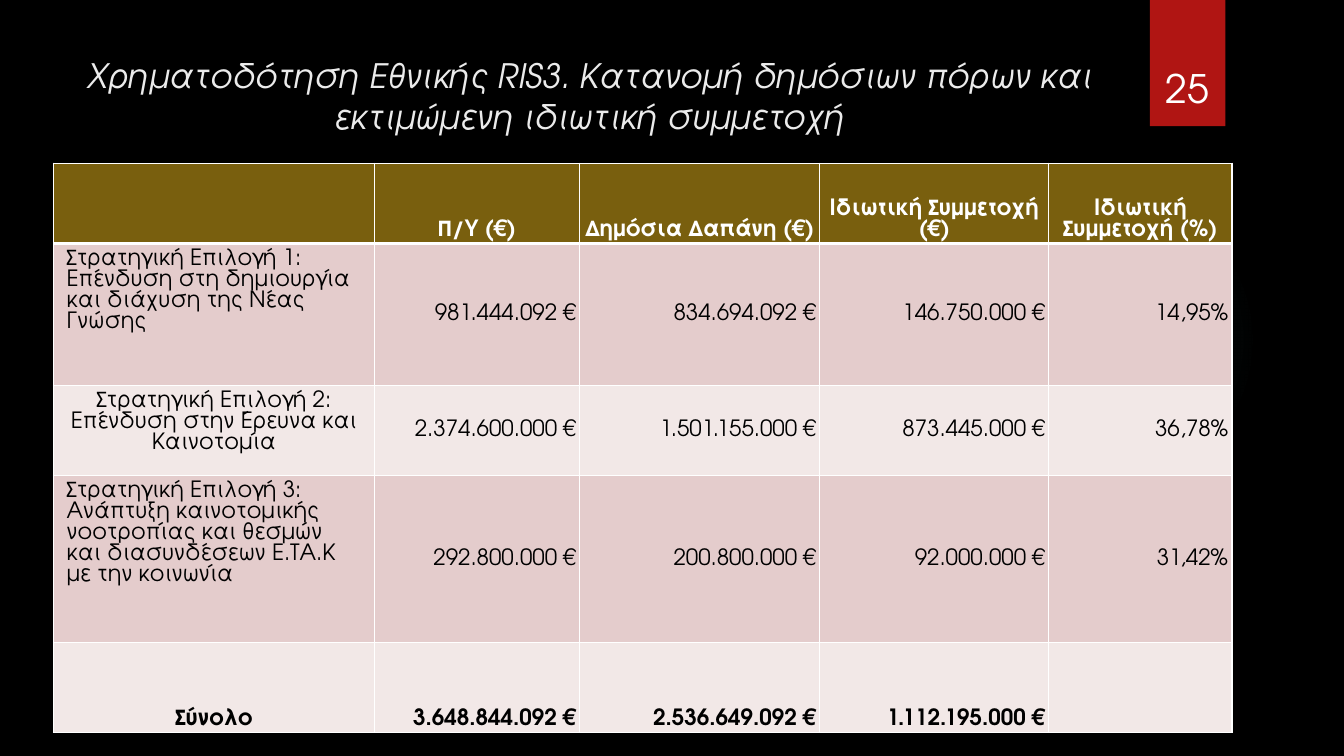
from dataclasses import dataclass

from lxml.etree import SubElement
from pptx import Presentation
from pptx.dml.color import RGBColor
from pptx.enum.shapes import MSO_SHAPE
from pptx.enum.text import MSO_ANCHOR, PP_ALIGN
from pptx.oxml import parse_xml
from pptx.oxml.ns import nsdecls, qn
from pptx.util import Cm, Pt


@dataclass(frozen=True)
class Theme:
    """Colours, font and type sizes of the slide."""
    font: str = "TeX Gyre Adventor"
    background: str = "000000"
    ribbon: str = "B01513"
    glow: str = "50B9C1"
    title: str = "EBEBEB"
    white: str = "FFFFFF"
    ink: str = "000000"
    header: str = "795F0E"
    bands: tuple = ("E4CCCC", "F2E8E7")
    title_size: int = 24
    number_size: int = 28
    table_size: int = 16
    table_leading: int = 15


class SlideBuilder:
    """Holds the theme and the current slide and draws each kind of element."""

    def __init__(self, page, theme):
        """Keep the slide and paint its background."""
        self.page, self.theme = page, theme
        fill = page.background.fill
        fill.solid()
        fill.fore_color.rgb = RGBColor.from_string(theme.background)

    def shape(self, kind, left, top, width, height):
        """Add a preset shape without line or shadow."""
        shape = self.page.shapes.add_shape(kind, Cm(left), Cm(top), Cm(width), Cm(height))
        shape.shadow.inherit = False
        shape.line.fill.background()
        return shape

    def ribbon(self, *place):
        """Add the solid page-number ribbon."""
        shape = self.shape(MSO_SHAPE.RECTANGLE, *place)
        shape.fill.solid()
        shape.fill.fore_color.rgb = RGBColor.from_string(self.theme.ribbon)

    def glow(self, *place):
        """Add a faint circle that fades out from its centre."""
        shape = self.shape(MSO_SHAPE.OVAL, *place)
        stops = "".join(
            f'<a:gs pos="{position * 1000}"><a:srgbClr val="{self.theme.glow}">'
            f'<a:alpha val="{alpha * 1000}"/></a:srgbClr></a:gs>'
            for position, alpha in ((0, 7), (36, 6), (69, 0)))
        gradient = parse_xml(
            f'<a:gradFill {nsdecls("a")}><a:gsLst>{stops}</a:gsLst><a:path path="circle">'
            '<a:fillToRect l="50000" t="50000" r="50000" b="50000"/></a:path></a:gradFill>')
        shape.element.spPr.find(qn("a:prstGeom")).addnext(gradient)

    def format(self, para, size, color, align, bold=False, italic=False):
        """Style a paragraph and its runs."""
        para.alignment = align
        for span in para.runs:
            span.font.name = self.theme.font
            span.font.size = Pt(size)
            span.font.bold, span.font.italic = bold, italic
            span.font.color.rgb = RGBColor.from_string(color)

    def text(self, words, place, size, color, anchor, italic=False):
        """Add a centred text box."""
        box = self.page.shapes.add_textbox(*map(Cm, place))
        frame = box.text_frame
        frame.word_wrap = True
        frame.vertical_anchor = anchor
        frame.text = words
        self.format(frame.paragraphs[0], size, color, PP_ALIGN.CENTER, italic=italic)

    def borders(self, cell, top, bottom):
        """Draw the white borders of a cell."""
        properties = cell._tc.get_or_add_tcPr()
        for side, width in (("L", 1), ("R", 1), ("T", top), ("B", bottom)):
            line = SubElement(properties, qn(f"a:ln{side}"), w=str(Pt(width)))
            fill = SubElement(line, qn("a:solidFill"))
            SubElement(fill, qn("a:srgbClr"), val=self.theme.white)

    def cell(self, cell, words, row, column, last):
        """Fill, border and style one table cell."""
        theme = self.theme
        header, label = row == 0, column == 0 and 0 < row < last
        self.borders(cell, 3 if row == 1 else 1, 3 if header else 1)
        cell.fill.solid()
        fill = theme.header if header else theme.bands[(row - 1) % 2]
        cell.fill.fore_color.rgb = RGBColor.from_string(fill)
        cell.margin_left = cell.margin_right = Cm(0.33 if label else 0.1)
        cell.margin_top = cell.margin_bottom = Cm(0.13 if label else 0.08)
        if label:
            cell.vertical_anchor = MSO_ANCHOR.TOP
            align = PP_ALIGN.CENTER if row == 2 else PP_ALIGN.LEFT
        else:
            edge = row in (0, last)
            cell.vertical_anchor = MSO_ANCHOR.BOTTOM if edge else MSO_ANCHOR.MIDDLE
            align = PP_ALIGN.CENTER if header or column == 0 else PP_ALIGN.RIGHT
        cell.text_frame.text = words
        para = cell.text_frame.paragraphs[0]
        para.line_spacing = Pt(theme.table_leading)
        color = theme.white if header else theme.ink
        self.format(para, theme.table_size, color, align, bold=row in (0, last))

    def table(self, rows, left, top, widths, heights):
        """Add the funding table."""
        table = self.page.shapes.add_table(
            len(rows), len(widths), Cm(left), Cm(top),
            Cm(sum(widths)), Cm(sum(heights))).table
        for column, width in zip(table.columns, widths):
            column.width = Cm(width)
        for line, height in zip(table.rows, heights):
            line.height = Cm(height)
        for row, values in enumerate(rows):
            for column, words in enumerate(values):
                self.cell(table.cell(row, column), words, row, column, len(rows) - 1)


FUNDING = [
    ("", "Π/Υ (€)", "Δημόσια Δαπάνη (€)", "Ιδιωτική Συμμετοχή (€)", "Ιδιωτική Συμμετοχή (%)"),
    ("Στρατηγική Επιλογή 1: Επένδυση στη δημιουργία και διάχυση της Νέας Γνώσης",
     "981.444.092 €", "834.694.092 €", "146.750.000 €", "14,95%"),
    ("Στρατηγική Επιλογή 2: Επένδυση στην Έρευνα και Καινοτομία",
     "2.374.600.000 €", "1.501.155.000 €", "873.445.000 €", "36,78%"),
    ("Στρατηγική Επιλογή 3: Ανάπτυξη καινοτομικής νοοτροπίας και θεσμών "
     "και διασυνδέσεων Ε.ΤΑ.Κ με την κοινωνία",
     "292.800.000 €", "200.800.000 €", "92.000.000 €", "31,42%"),
    ("Σύνολο", "3.648.844.092 €", "2.536.649.092 €", "1.112.195.000 €", ""),
]


def main():
    """Build and save the slide."""
    deck = Presentation()
    deck.slide_width, deck.slide_height = Cm(33.87), Cm(19.05)
    theme = Theme()
    slide = SlideBuilder(deck.slides.add_slide(deck.slide_layouts[6]), theme)
    slide.glow(23.9, 4.65, 7.82, 7.82)
    slide.ribbon(28.98, 0, 1.9, 3.18)
    slide.text("Χρηματοδότηση Εθνικής RIS3. Κατανομή δημόσιων πόρων και "
               "εκτιμώμενη ιδιωτική συμμετοχή", (1.8, 1.27, 26.14, 3.89),
               theme.title_size, theme.title, MSO_ANCHOR.TOP, italic=True)
    slide.text("25", (28.75, 0.81, 2.34, 2.13), theme.number_size, theme.white,
               MSO_ANCHOR.BOTTOM)
    slide.table(FUNDING, 1.35, 4.11, (8.08, 5.18, 6.05, 5.77, 4.62),
                (2.03, 3.58, 2.26, 4.22, 2.26))
    deck.save("out.pptx")


if __name__ == "__main__":
    main()
